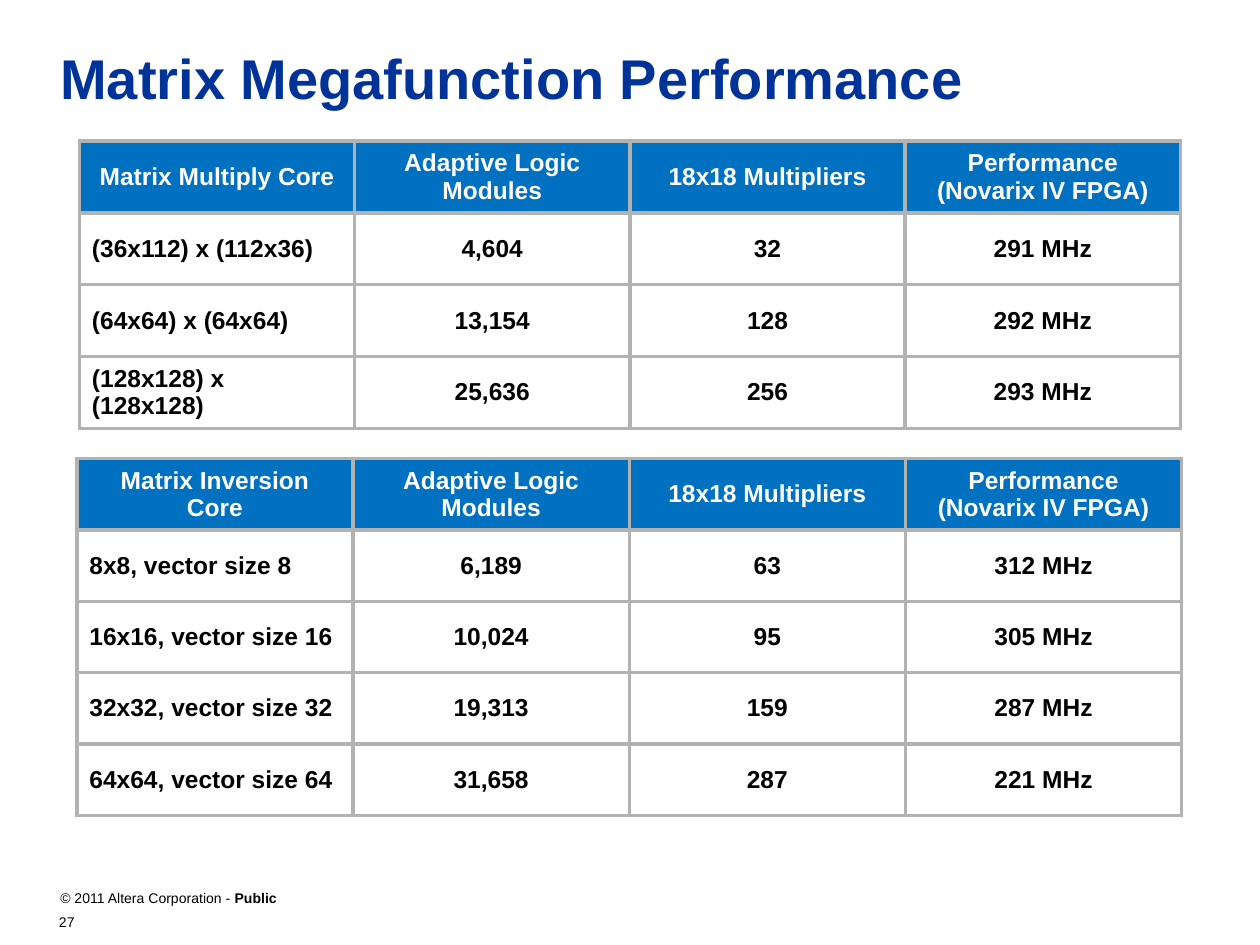
from dataclasses import dataclass

from lxml import etree
from pptx import Presentation
from pptx.dml.color import RGBColor
from pptx.enum.text import MSO_ANCHOR, PP_ALIGN
from pptx.oxml.ns import qn
from pptx.slide import Slide
from pptx.table import _Cell
from pptx.util import Inches, Pt

LEFT, CENTER = PP_ALIGN.LEFT, PP_ALIGN.CENTER
TOP, MIDDLE = MSO_ANCHOR.TOP, MSO_ANCHOR.MIDDLE


@dataclass(frozen=True)
class Theme:
    font: str = "Arial"
    title_color: str = "003399"
    header_fill: str = "0070C0"
    header_text: str = "FFFFFF"
    text: str = "000000"
    border: str = "B2B2B2"
    border_width: float = 2.25
    title_size: int = 32
    table_size: int = 14
    footer_size: int = 8


@dataclass(frozen=True)
class Label:
    left: float
    top: float
    width: float
    height: float
    runs: tuple[tuple[str, bool], ...]  # wording, bold
    size: int
    color: str


@dataclass(frozen=True)
class CoreTable:
    left: float
    top: float
    width: float
    height: float
    core: str
    rows: tuple[tuple[str, str, str, str], ...]


THEME = Theme()
SHARED_HEADERS = ("Adaptive Logic Modules", "18x18 Multipliers",
                  "Performance\v(Novarix IV FPGA)")

LABELS = (
    Label(0.38, 0.3, 9.11, 1, (("Matrix Megafunction Performance", True),),
          THEME.title_size, THEME.title_color),
    Label(0.38, 7.01, 4.65, 0.42,
          (("© 2011 Altera Corporation - ", False), ("Public", True)),
          THEME.footer_size, THEME.text),
    Label(0.37, 7.2, 0.76, 0.31, (("27", False),), THEME.footer_size, THEME.text),
)

CORE_TABLES = (
    CoreTable(0.63, 1.12, 8.74, 2.28, "Matrix Multiply Core", (
        ("(36x112) x (112x36)", "4,604", "32", "291 MHz"),
        ("(64x64) x (64x64)", "13,154", "128", "292 MHz"),
        ("(128x128) x (128x128)", "25,636", "256", "293 MHz"),
    )),
    CoreTable(0.61, 3.64, 8.77, 2.83, "Matrix Inversion Core", (
        ("8x8, vector size 8", "6,189", "63", "312 MHz"),
        ("16x16, vector size 16", "10,024", "95", "305 MHz"),
        ("32x32, vector size 32", "19,313", "159", "287 MHz"),
        ("64x64, vector size 64", "31,658", "287", "221 MHz"),
    )),
)


def add_label(slide: Slide, label: Label) -> None:
    box = slide.shapes.add_textbox(Inches(label.left), Inches(label.top),
                                   Inches(label.width), Inches(label.height))
    frame = box.text_frame
    frame.word_wrap = True
    frame.vertical_anchor = TOP
    paragraph = frame.paragraphs[0]
    paragraph.font.name = THEME.font
    paragraph.font.size = Pt(label.size)
    paragraph.font.color.rgb = RGBColor.from_string(label.color)
    for wording, bold in label.runs:
        run = paragraph.add_run()
        run.text = wording
        run.font.bold = bold


def set_borders(cell: _Cell) -> None:
    properties = cell._tc.get_or_add_tcPr()
    for side in ("lnL", "lnR", "lnT", "lnB"):
        line = etree.SubElement(properties, qn(f"a:{side}"),
                                w=str(Pt(THEME.border_width)))
        fill = etree.SubElement(line, qn("a:solidFill"))
        etree.SubElement(fill, qn("a:srgbClr"), val=THEME.border)


def fill_cell(cell: _Cell, wording: str, is_header: bool, alignment: PP_ALIGN) -> None:
    set_borders(cell)  # borders come before the fill in the cell properties
    if is_header:
        cell.fill.solid()
        cell.fill.fore_color.rgb = RGBColor.from_string(THEME.header_fill)
    else:
        cell.fill.background()
    cell.vertical_anchor = MIDDLE
    paragraph = cell.text_frame.paragraphs[0]
    paragraph.text = wording
    paragraph.alignment = alignment
    paragraph.font.name = THEME.font
    paragraph.font.size = Pt(THEME.table_size)
    paragraph.font.bold = True
    color = THEME.header_text if is_header else THEME.text
    paragraph.font.color.rgb = RGBColor.from_string(color)


def add_core_table(slide: Slide, core_table: CoreTable) -> None:
    grid = ((core_table.core, *SHARED_HEADERS), *core_table.rows)
    # Rows and columns share the height and width equally
    table = slide.shapes.add_table(
        len(grid), len(grid[0]), Inches(core_table.left), Inches(core_table.top),
        Inches(core_table.width), Inches(core_table.height)).table
    table.horz_banding = False
    for row, wordings in enumerate(grid):
        for column, wording in enumerate(wordings):
            is_header = row == 0
            alignment = CENTER if is_header or column > 0 else LEFT
            fill_cell(table.cell(row, column), wording, is_header, alignment)


def main() -> None:
    presentation = Presentation()
    presentation.slide_width = Inches(10)
    presentation.slide_height = Inches(7.5)
    slide = presentation.slides.add_slide(presentation.slide_layouts[6])

    # Title, copyright line and page number
    for label in LABELS:
        add_label(slide, label)

    # Performance tables
    for core_table in CORE_TABLES:
        add_core_table(slide, core_table)

    presentation.save("out.pptx")


if __name__ == "__main__":
    main()
